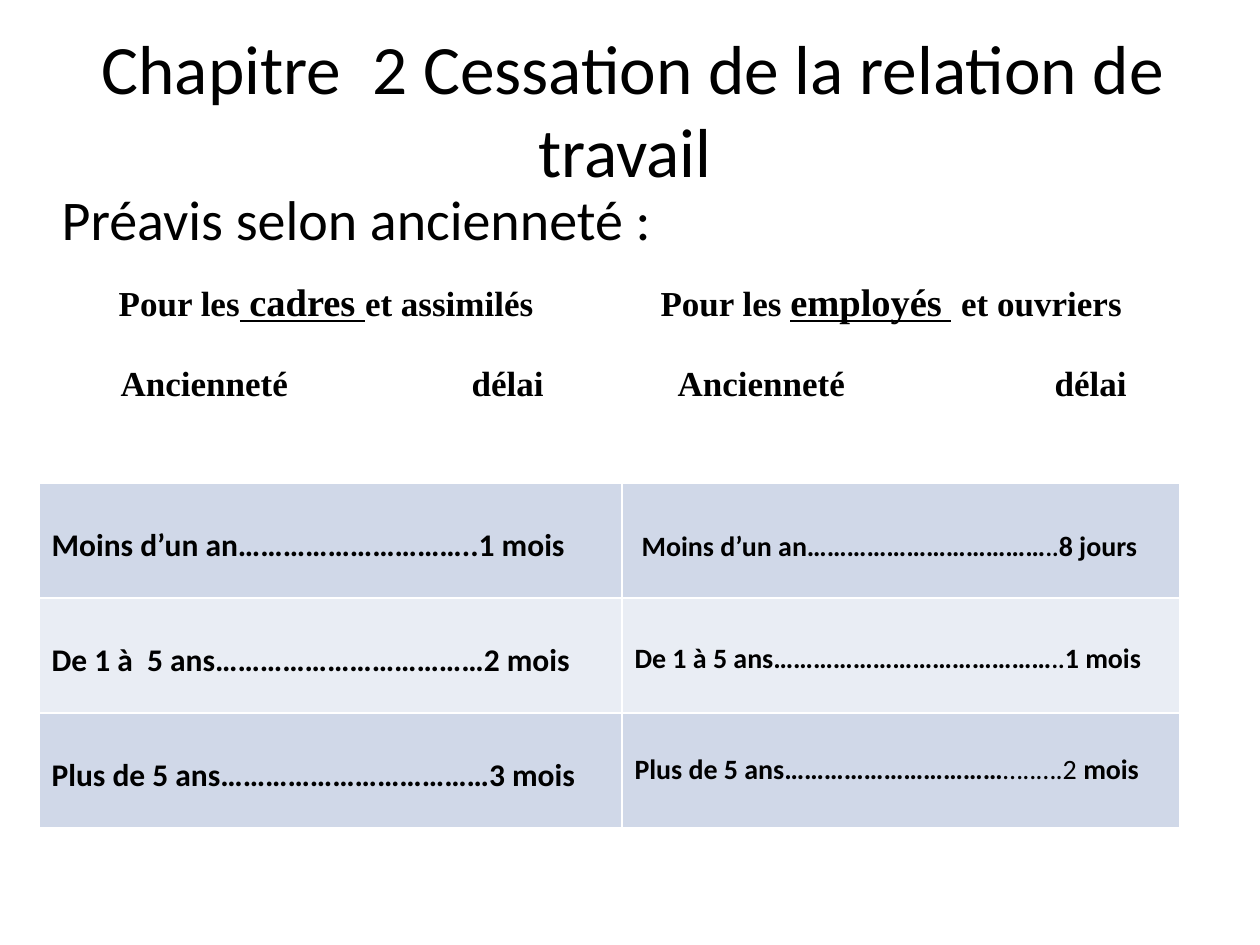
"""Build the slide on notice periods by seniority, with its table."""
from lxml.etree import SubElement
from pptx import Presentation
from pptx.dml.color import RGBColor as Rgb
from pptx.enum.text import MSO_ANCHOR as Anchor, MSO_AUTO_SIZE as AutoSize, PP_ALIGN as Align
from pptx.oxml.ns import qn
from pptx.util import Pt

PX = 914400 / 126
COLORS = {"text": "000000", "head": "FFFFFF", "dark": "D0D8E8", "light": "E9EDF4"}
SERIF = "Times New Roman"
SANS = "Calibri"


def px(length):
    return round(length * PX)


def add_span(para, text, size, name, **extra):
    span = para.add_run()
    span.text = text
    for key, value in {"size": Pt(size), "name": name, **extra}.items():
        setattr(span.font, key, value)
    span.font.color.rgb = Rgb.from_string(COLORS["text"])


deck = Presentation()
deck.slide_width, deck.slide_height = px(1260), px(945)
page = deck.slides.add_slide(deck.slide_layouts[1])
title, body = page.placeholders

holders = [
    (title, (69, 38, 1128, 140), "Chapitre  2 Cessation de la relation de travail ", 39.6),
    (body, (49, 178, 1148, 667), "Préavis selon ancienneté :", 32),
]
for box, place, text, size in holders:
    for key, value in zip(("left", "top", "width", "height"), place):
        setattr(box, key, px(value))
    box.text_frame.auto_size = AutoSize.NONE
    add_span(box.text_frame.paragraphs[0], text, size, SANS)
title.text_frame.vertical_anchor = Anchor.MIDDLE
title.text_frame.paragraphs[0].alignment = Align.CENTER
body_props = body.text_frame.paragraphs[0]._p.get_or_add_pPr()
for key in ("marL", "indent"):
    body_props.set(key, "0")
SubElement(body_props, qn("a:buNone"))

table = page.shapes.add_table(4, 2, px(39), px(276), px(1141), px(552)).table
for column, width in zip(table.columns, (583, 558)):
    column.width = px(width)
for row, height in zip(table.rows, (207, 115, 115, 115)):
    row.height = px(height)

headings = [
    ([("Pour les", 20, False), (" cadres ", 22, True), ("et assimilés ", 20, False)],
     Align.CENTER, [], (69, 420)),
    ([("\tPour les ", 20, False), ("employés ", 22, True), (" ", 22, False),
      ("et ouvriers", 20, False)],
     Align.LEFT, [26], (43, 420)),
]
for cell, (spans, align, first_tabs, label_tabs) in zip(table.rows[0].cells, headings):
    cell.fill.solid()
    cell.fill.fore_color.rgb = Rgb.from_string(COLORS["head"])
    group = cell.text_frame.paragraphs[0]
    group.alignment = align
    for text, size, underline in spans:
        add_span(group, text, size, SERIF, bold=True, underline=underline)
    labels = cell.text_frame.add_paragraph()
    labels.space_before = Pt(23)
    add_span(labels, "\tAncienneté\tdélai", 20, SERIF, bold=True)
    for para, stops in ((group, first_tabs), (labels, label_tabs)):
        if stops:
            tabs = SubElement(para._p.get_or_add_pPr(), qn("a:tabLst"))
            for stop in stops:
                SubElement(tabs, qn("a:tab"), pos=str(px(stop)), algn="l")

notices = [
    ("dark", 44, [("Moins d’un an…………………………..1 mois", 18, True)],
     44, [(" ", 18, True), ("Moins d’un an………………………………", 16, True),
          ("..", 14, True), ("8 jours", 16, True)]),
    ("light", 44, [("De 1 à  5 ans………………………………2 mois", 18, True)],
     44, [("De 1 à 5 ans……………………………………", 16, True), ("..", 14, True),
          ("1 mois", 16, True)]),
    ("dark", 44, [("Plus de 5 ans………………………………3 mois", 18, True)],
     40, [("Plus de 5 ans……………………………", 16, True), ("…..….2 ", 16, False),
          ("mois", 16, True)]),
]
for index, (shade, left_top, left_spans, right_top, right_spans) in enumerate(notices, 1):
    sides = ((left_top, left_spans), (right_top, right_spans))
    for cell, (top, spans) in zip(table.rows[index].cells, sides):
        cell.fill.solid()
        cell.fill.fore_color.rgb = Rgb.from_string(COLORS[shade])
        cell.margin_top = px(top)
        for text, size, bold in spans:
            add_span(cell.text_frame.paragraphs[0], text, size, SANS, bold=bold)

deck.save("out.pptx")
